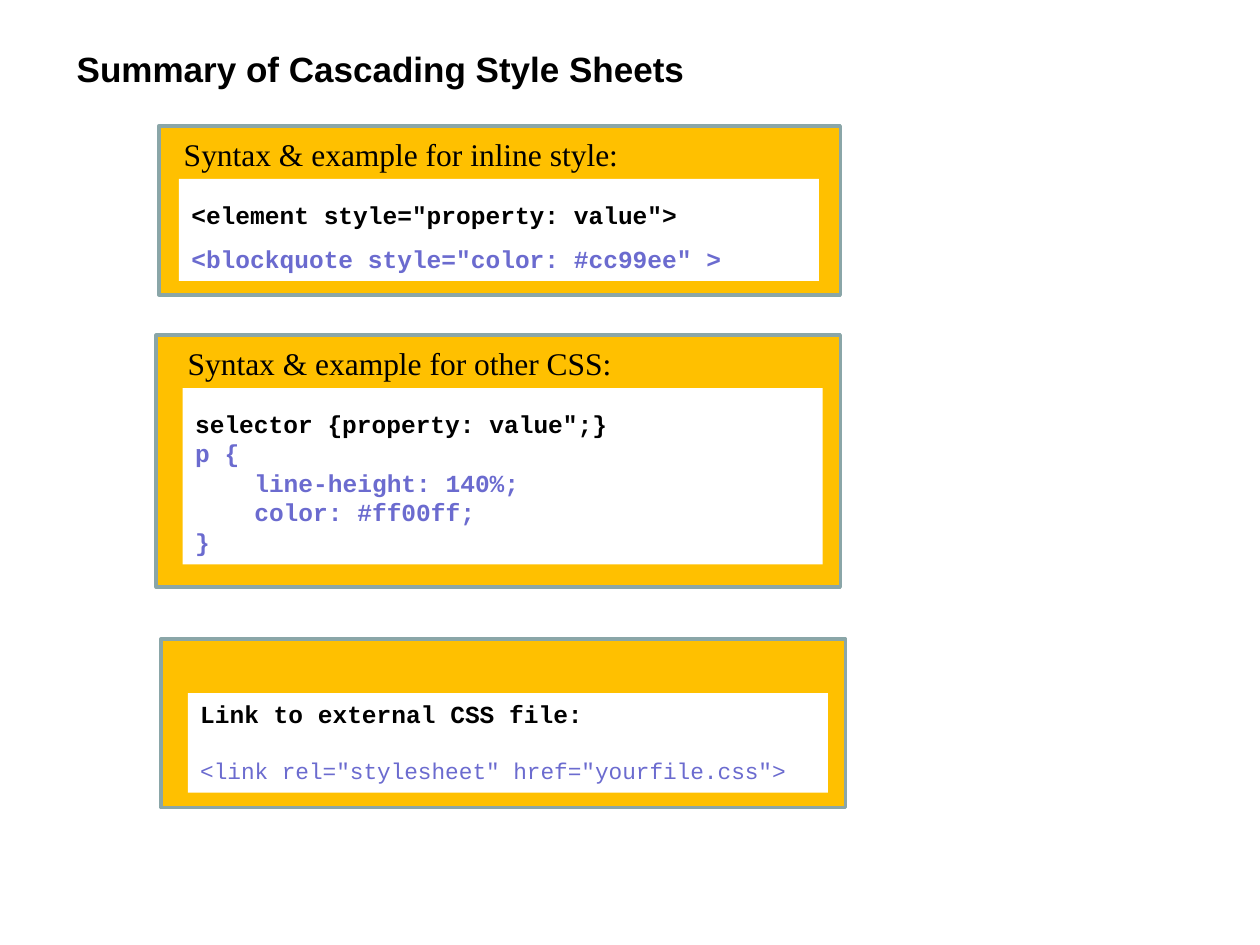
from pptx import Presentation
from pptx.dml.color import RGBColor
from pptx.enum.shapes import MSO_SHAPE
from pptx.enum.text import MSO_ANCHOR, PP_ALIGN
from pptx.util import Inches, Pt

BLACK = RGBColor(0x00, 0x00, 0x00)
WHITE = RGBColor(0xFF, 0xFF, 0xFF)
AMBER = RGBColor(0xFF, 0xC0, 0x00)
SLATE = RGBColor(0x8A, 0xA6, 0xA8)
VIOLET = RGBColor(0x6B, 0x6B, 0xCF)
CODE_INDENT = Inches(0.47)


def write(frame, text, font="Courier New", size=14, color=BLACK, bold=True,
          spacing=1.0, before=0, indent=0):
    frame.word_wrap = True
    frame.vertical_anchor = MSO_ANCHOR.TOP
    line = frame.paragraphs[0] if not frame.text else frame.add_paragraph()
    line.alignment = PP_ALIGN.LEFT
    line.line_spacing = spacing
    line.space_before = Pt(before)
    if indent:
        line._p.get_or_add_pPr().set("marL", str(indent))
    run = line.add_run()
    run.text = text
    run.font.name = font
    run.font.size = Pt(size)
    run.font.bold = bold
    run.font.color.rgb = color


def add_box(slide, bounds, fill, outline=None):
    box = slide.shapes.add_shape(MSO_SHAPE.RECTANGLE, *map(Inches, bounds))
    box.shadow.inherit = False
    box.fill.solid()
    box.fill.fore_color.rgb = fill
    if outline is None:
        box.line.fill.background()
    else:
        box.line.color.rgb = outline
        box.line.width = Pt(2)
    return box


deck = Presentation()
deck.slide_width = Inches(10)
deck.slide_height = Inches(7.5)
slide = deck.slides.add_slide(deck.slide_layouts[6])

title = slide.shapes.add_textbox(Inches(0.51), Inches(0.33), Inches(7.15), Inches(0.44))
write(title.text_frame, "Summary of Cascading Style Sheets", font="Arial", size=20)

sections = [
    ((1.26, 1, 5.41, 1.34), (1.42, 1.42, 5.08, 0.81),
     "Syntax & example for inline style:", (1.36, 1.02, 5.39, 0.4),
     [('<element style="property: value">', dict(spacing=1.5)),
      ('<blockquote style="color: #cc99ee" >', dict(color=VIOLET, spacing=1.5))]),
    ((1.24, 2.66, 5.43, 2), (1.45, 3.08, 5.08, 1.4),
     "Syntax & example for other CSS:", (1.39, 2.68, 5.28, 0.4),
     [('selector {property: value";}', dict(spacing=1.5)),
      ("p {", dict(color=VIOLET)),
      ("line-height: 140%;", dict(color=VIOLET, indent=CODE_INDENT)),
      ("color: #ff00ff;", dict(color=VIOLET, indent=CODE_INDENT)),
      ("}", dict(color=VIOLET))]),
    ((1.28, 5.07, 5.43, 1.34), (1.49, 5.5, 5.08, 0.79), None, None,
     [("Link to external CSS file:", {}),
      ('<link rel="stylesheet" href="yourfile.css">',
       dict(color=VIOLET, size=13, bold=False, before=16))]),
]

for panel_bounds, code_bounds, heading, heading_bounds, code_lines in sections:
    add_box(slide, panel_bounds, AMBER, SLATE)
    code = add_box(slide, code_bounds, WHITE)
    for text, style in code_lines:
        write(code.text_frame, text, **style)
    if heading:
        caption = slide.shapes.add_textbox(*map(Inches, heading_bounds))
        write(caption.text_frame, heading, font="Times New Roman", size=18, bold=False)

deck.save("out.pptx")
